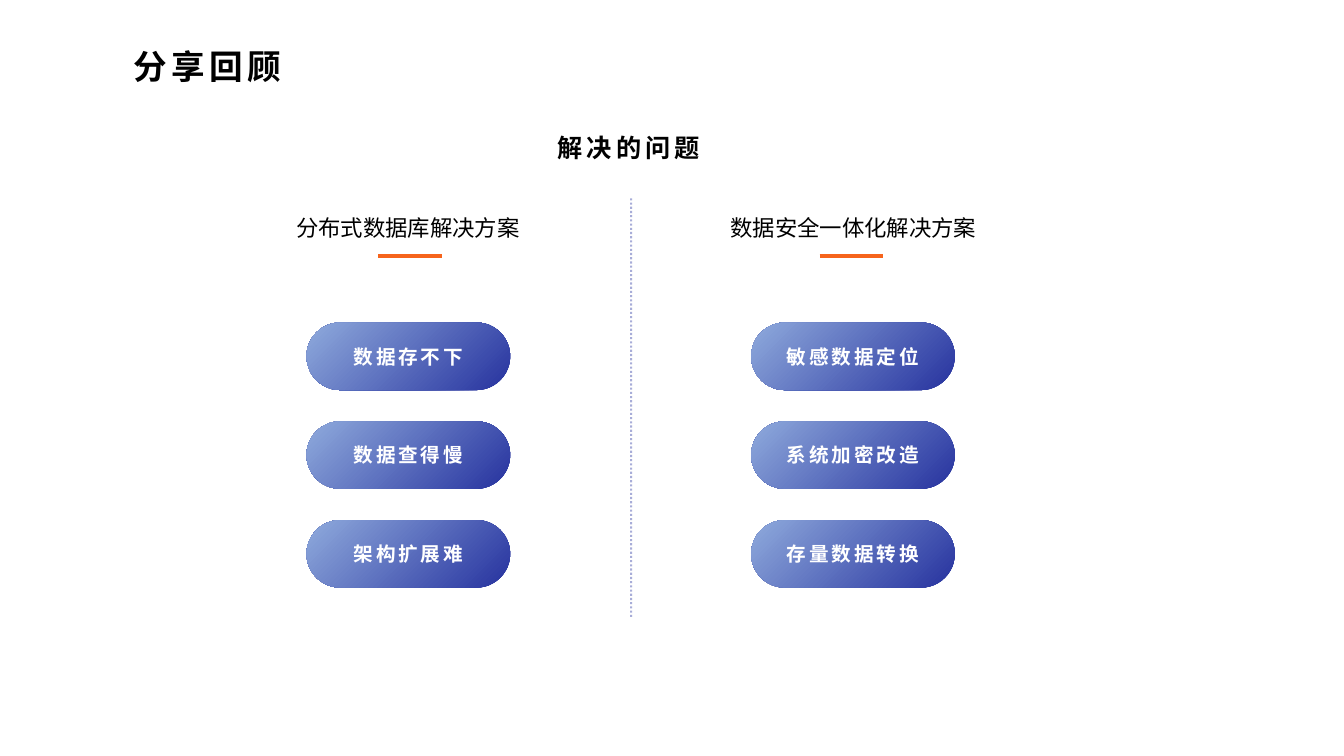
import pptx
import pptx.dml.color
import pptx.enum.dml
import pptx.enum.shapes
import pptx.enum.text
import pptx.oxml.ns
import pptx.util
from lxml import etree
from pptx.util import Inches

FONT = "Noto Sans CJK SC"
BLACK, WHITE = "000000", "FFFFFF"
NAVY, SKY, ORANGE = "27339F", "8FAADC", "F6641C"
CENTER = pptx.enum.text.PP_ALIGN.CENTER

PILL_TOP, PILL_STEP = 3.2, 0.98
# heading, heading left and width, underline left, pill left, pill labels
COLUMNS = [
    ("分布式数据库解决方案", 2.82, 2.45, 3.75, 3.04,
     ["数据存不下", "数据查得慢", "架构扩展难"]),
    ("数据安全一体化解决方案", 7.13, 2.67, 8.13, 7.45,
     ["敏感数据定位", "系统加密改造", "存量数据转换"]),
]


def rgb(color):
    return pptx.dml.color.RGBColor.from_string(color)


def add_xml(parent, tag, **attributes):
    return etree.SubElement(parent, pptx.oxml.ns.qn(tag), **attributes)


def write(tf, text, size, color, bold=False, spacing=0, align=None):
    """Fill a text frame with one paragraph; spacing is in points."""
    p = tf.paragraphs[0]
    p.text = text
    p.alignment = align
    p.font.size = pptx.util.Pt(size)
    p.font.bold = bold
    p.font.name = FONT
    p.font.color.rgb = rgb(color)
    props = p._p.pPr.find(pptx.oxml.ns.qn("a:defRPr"))
    props.set("spc", str(spacing * 100))
    add_xml(props, "a:ea", typeface=FONT)


def add_text(slide, box, text, size, wrap=False, **style):
    sp = slide.shapes.add_textbox(*map(Inches, box))
    tf = sp.text_frame
    tf.word_wrap = wrap
    tf.auto_size = pptx.enum.text.MSO_AUTO_SIZE.SHAPE_TO_FIT_TEXT
    write(tf, text, size, BLACK, **style)


def add_pill(slide, left, top, text):
    sp = slide.shapes.add_shape(
        pptx.enum.shapes.MSO_SHAPE.ROUNDED_RECTANGLE,
        Inches(left), Inches(top), Inches(2.02), Inches(0.67))
    sp.adjustments[0] = 0.5
    sp.shadow.inherit = False
    sp.line.fill.background()
    sp.fill.gradient()
    sp.fill.gradient_angle = 135
    for stop, color in zip(sp.fill.gradient_stops, (NAVY, SKY)):
        stop.color.rgb = rgb(color)
    tf = sp.text_frame
    tf.vertical_anchor = pptx.enum.text.MSO_ANCHOR.MIDDLE
    write(tf, text, 14, WHITE, bold=True, spacing=2, align=CENTER)


def add_line(slide, start, end, color, width):
    line = slide.shapes.add_connector(
        pptx.enum.shapes.MSO_CONNECTOR.STRAIGHT,
        *map(Inches, start + end))
    line.line.color.rgb = rgb(color)
    line.line.width = pptx.util.Pt(width)
    add_xml(line._element.spPr, "a:effectLst")
    return line


def add_divider(slide):
    divider = add_line(slide, (6.26, 6.12), (6.26, 1.96), NAVY, 1.5)
    divider.line.dash_style = pptx.enum.dml.MSO_LINE.ROUND_DOT
    color = next(divider._element.spPr.iter(pptx.oxml.ns.qn("a:srgbClr")))
    add_xml(color, "a:alpha", val="40000")


def main():
    prs = pptx.Presentation()
    prs.slide_width, prs.slide_height = Inches(13.33), Inches(7.5)
    slide = prs.slides.add_slide(prs.slide_layouts[6])

    add_text(slide, (1.23, 0.41, 9.25, 0.5), "分享回顾", 24,
             wrap=True, bold=True, spacing=3)
    add_text(slide, (5.43, 1.26, 1.67, 0.4), "解决的问题", 18,
             bold=True, spacing=3)
    add_divider(slide)
    for heading, left, width, rule_left, pill_left, labels in COLUMNS:
        add_text(slide, (left, 2.08, width, 0.37), heading, 16, align=CENTER)
        add_line(slide, (rule_left, 2.54), (rule_left + 0.63, 2.54),
                 ORANGE, 3.5)
        for row, label in enumerate(labels):
            add_pill(slide, pill_left, PILL_TOP + row * PILL_STEP, label)

    prs.save("out.pptx")


if __name__ == "__main__":
    main()
